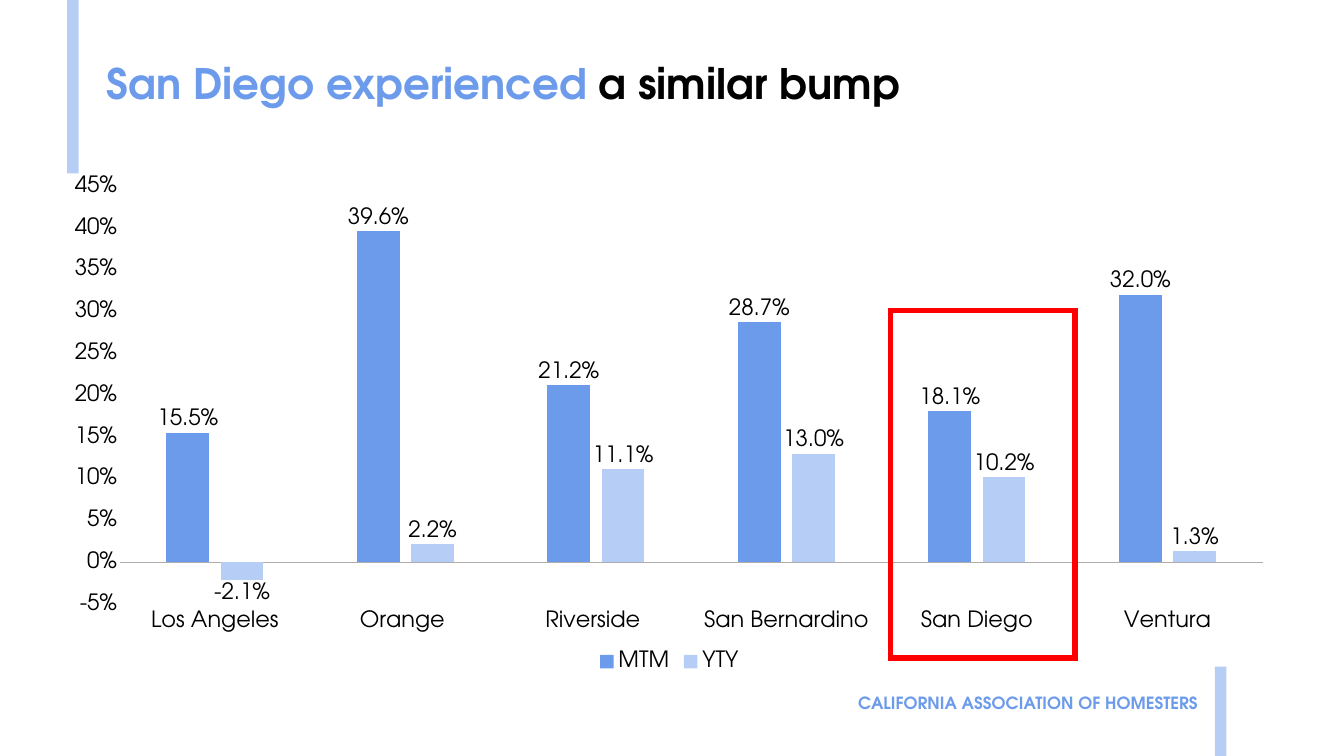
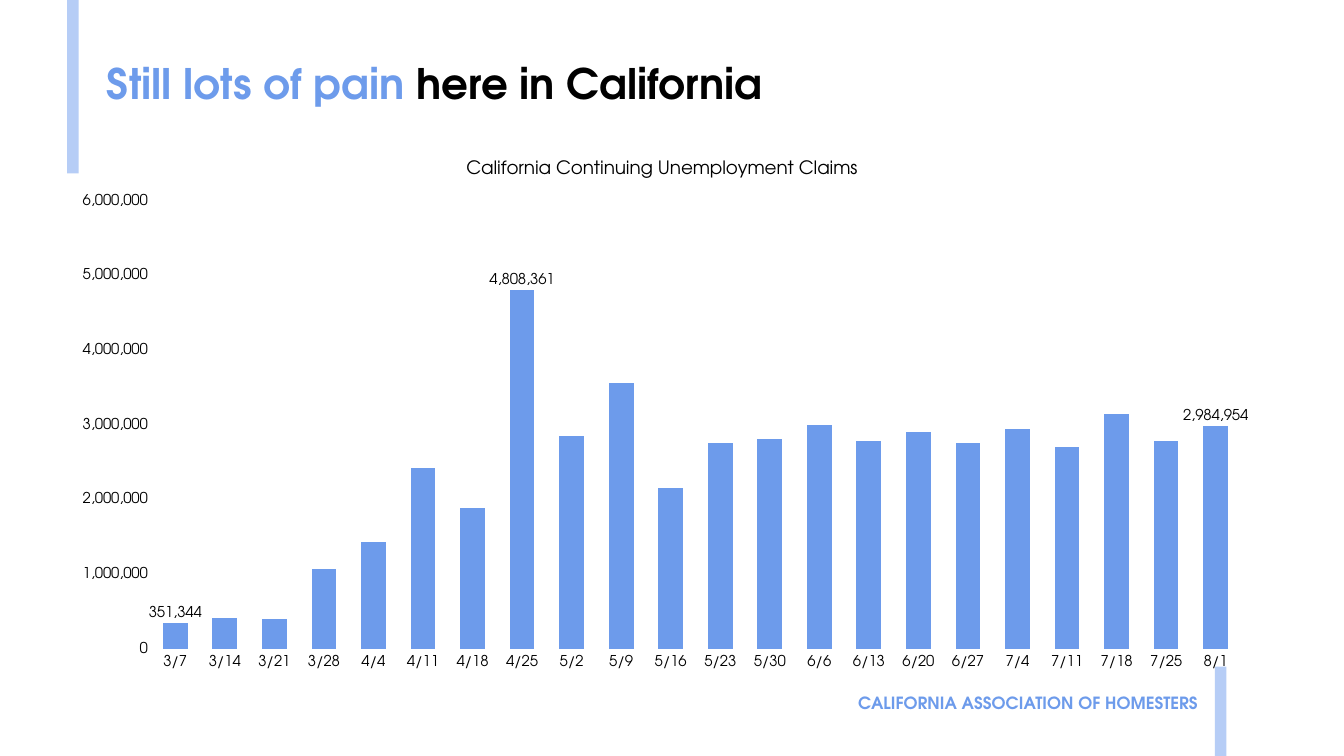
from lxml import etree
from pptx import Presentation
from pptx.chart.data import CategoryChartData
from pptx.dml.color import RGBColor
from pptx.enum import chart as ch, shapes, text
from pptx.oxml.ns import qn
from pptx.util import Inches, Pt

BLUE = RGBColor(0x6D, 0x9B, 0xEB)
PALE = RGBColor(0xB6, 0xCD, 0xF6)
BLACK = RGBColor(0, 0, 0)
WHITE = RGBColor(255, 255, 255)
GRAY = RGBColor(0xAF, 0xAB, 0xAB)
RED = RGBColor(255, 0, 0)
FONT = "TeX Gyre Adventor"
FOOTER = "CALIFORNIA ASSOCIATION OF HOMESTERS"
# Two equal bands that bleed over the top and bottom edges
BANDS = [(1, -4.54, 0.17, 7.12), (18.08, 9.92, 0.17, 7.12)]
HIGHLIGHT = (13.25, 4.62, 2.75, 5.17)

# Content; "plot" is the inner plot area on the slide, in inches
SLIDES = [
    dict(
        title=("San Diego experienced ", "a similar bump"), title_width=12.68,
        frame=(0.75, 2.46, 18.42, 7.61), plot=(1.78, 2.77, 17.01, 6.22),
        size=24, gap=219, axis_line=GRAY, scale=(-0.05, 0.45, 0.05),
        axis_format="0%", label_format="0.0%", legend=True,
        categories=["Los Angeles", "Orange ", "Riverside ", "San Bernardino",
                    "San Diego", "Ventura"],
        series=[("MTM", BLUE, [0.155, 0.396, 0.212, 0.287, 0.181, 0.32]),
                ("YTY", PALE, [-0.021, 0.022, 0.111, 0.13, 0.102, 0.013])],
        highlight=HIGHLIGHT,
    ),
    dict(
        title=("Still lots of pain ", "here in California"), title_width=13.92,
        frame=(0.88, 2.1, 17.94, 7.97), plot=(2.24, 2.99, 16.22, 6.67),
        size=16, gap=100, axis_line=WHITE, scale=(0, 6000000, 1000000),
        axis_format="#,##0", label_format="#,##0",
        chart_title="California Continuing Unemployment Claims",
        categories=["3/7", "3/14", "3/21", "3/28", "4/4", "4/11", "4/18", "4/25",
                    "5/2", "5/9", "5/16", "5/23", "5/30", "6/6", "6/13", "6/20",
                    "6/27", "7/4", "7/11", "7/18", "7/25", "8/1"],
        series=[("Series 1", BLUE, [
            351344, 421912, 400565, 1076761, 1429954, 2422458, 1887575, 4808361,
            2850204, 3565153, 2155310, 2752401, 2812484, 3001413, 2779425,
            2901601, 2758474, 2946807, 2704904, 3140619, 2789482, 2984954])],
        labelled_points=(0, 7, 21),
    ),
]


def style_font(font, size, color=BLACK, bold=False):
    font.name, font.size, font.bold = FONT, Pt(size), bold
    font.color.rgb = color


def write(frame, spans, size, bold=False, align=text.PP_ALIGN.LEFT, spacing=None):
    """Fill a text frame with one paragraph of (text, colour) spans."""
    para = frame.paragraphs[0]
    para.alignment, para.line_spacing = align, spacing
    for words, color in spans:
        span = para.add_run()
        span.text = words
        style_font(span.font, size, color, bold)


def place(shape, box):
    shape.left, shape.top, shape.width, shape.height = map(Inches, box)


def add_rect(page, box, fill=None, line=None, weight=0):
    rect = page.shapes.add_shape(shapes.MSO_SHAPE.RECTANGLE, *map(Inches, box))
    rect.shadow.inherit = False
    if fill is None:
        rect.fill.background()
    else:
        rect.fill.solid()
        rect.fill.fore_color.rgb = fill
    if line is None:
        rect.line.fill.background()
    else:
        rect.line.color.rgb, rect.line.width = line, Pt(weight)
        outline = rect._element.spPr.find(qn("a:ln"))
        etree.SubElement(outline, qn("a:miter")).set("lim", "800000")


def add_frame(page, item):
    """Bands, footer and title shared by all slides."""
    for band in BANDS:
        add_rect(page, band, PALE)
    footer = page.shapes.add_textbox(*map(Inches, (12.67, 10.26, 5.25, 0.4))).text_frame
    footer.word_wrap = True
    footer.vertical_anchor = text.MSO_ANCHOR.MIDDLE
    write(footer, [(FOOTER, BLUE)], 18, bold=True, align=text.PP_ALIGN.RIGHT)
    title = page.shapes.title
    place(title, (1.49, 0.89, item["title_width"], 0.78))
    title.text_frame.auto_size = text.MSO_AUTO_SIZE.SHAPE_TO_FIT_TEXT
    title.text_frame.vertical_anchor = text.MSO_ANCHOR.MIDDLE
    write(title.text_frame, zip(item["title"], (BLUE, BLACK)), 45, bold=True, spacing=0.9)


def set_plot_area(chart, frame, plot):
    """Fix the inner plot area as fractions of the chart frame."""
    area = chart._chartSpace.chart.plotArea
    for old in area.findall(qn("c:layout")):
        area.remove(old)
    layout = etree.Element(qn("c:layout"))
    manual = etree.SubElement(layout, qn("c:manualLayout"))
    left, top, width, height = frame
    settings = [("layoutTarget", "inner"), ("xMode", "edge"), ("yMode", "edge"),
                ("x", (plot[0] - left) / width), ("y", (plot[1] - top) / height),
                ("w", plot[2] / width), ("h", plot[3] / height)]
    for name, value in settings:
        etree.SubElement(manual, qn("c:" + name)).set("val", str(value))
    area.insert(0, layout)


def style_axes(chart, item):
    category, value = chart.category_axis, chart.value_axis
    for axis in (category, value):
        axis.major_tick_mark = axis.minor_tick_mark = ch.XL_TICK_MARK.NONE
        style_font(axis.tick_labels.font, item["size"])
    category.tick_label_position = ch.XL_TICK_LABEL_POSITION.LOW
    category.has_major_gridlines = False
    category.format.line.color.rgb = item["axis_line"]
    category.format.line.width = Pt(0.75)
    value.minimum_scale, value.maximum_scale, value.major_unit = item["scale"]
    value.format.line.fill.background()
    value.has_major_gridlines = True
    value.major_gridlines.format.line.color.rgb = WHITE
    value.major_gridlines.format.line.width = Pt(0.75)
    value.tick_labels.number_format = item["axis_format"]
    value.tick_labels.number_format_is_linked = False


def style_series(series, color, item):
    series.format.fill.solid()
    series.format.fill.fore_color.rgb = color
    series.invert_if_negative = False
    points = item.get("labelled_points", ())
    labels = series.data_labels
    labels.show_value = not points
    labels.number_format = item["label_format"]
    labels.number_format_is_linked = False
    for label in [labels] + [series.points[i].data_label for i in points]:
        style_font(label.font, item["size"])
        label.position = ch.XL_LABEL_POSITION.OUTSIDE_END


def add_columns(page, item):
    data = CategoryChartData(number_format=item["label_format"])
    data.categories = item["categories"]
    for name, _, values in item["series"]:
        data.add_series(name, values)
    chart = page.shapes.add_chart(ch.XL_CHART_TYPE.COLUMN_CLUSTERED,
                                  *map(Inches, item["frame"]), data).chart
    style_font(chart.font, item["size"])
    plot = chart.plots[0]
    plot.vary_by_categories = False
    plot.gap_width, plot.overlap = item["gap"], -27
    style_axes(chart, item)
    for series, (_, color, _) in zip(plot.series, item["series"]):
        style_series(series, color, item)
    chart.has_legend = item.get("legend", False)
    if chart.has_legend:
        chart.legend.position = ch.XL_LEGEND_POSITION.BOTTOM
        chart.legend.include_in_layout = False
        style_font(chart.legend.font, item["size"])
    chart.has_title = "chart_title" in item
    if chart.has_title:
        write(chart.chart_title.text_frame, [(item["chart_title"], BLACK)], 19.7,
              align=text.PP_ALIGN.CENTER)
    set_plot_area(chart, item["frame"], item["plot"])


def main():
    deck = Presentation()
    deck.slide_width, deck.slide_height = Inches(20), Inches(11.25)
    for item in SLIDES:
        page = deck.slides.add_slide(deck.slide_layouts[5])
        add_frame(page, item)
        add_columns(page, item)
        if "highlight" in item:
            add_rect(page, item["highlight"], line=RED, weight=6)
    deck.save("out.pptx")


if __name__ == "__main__":
    main()
